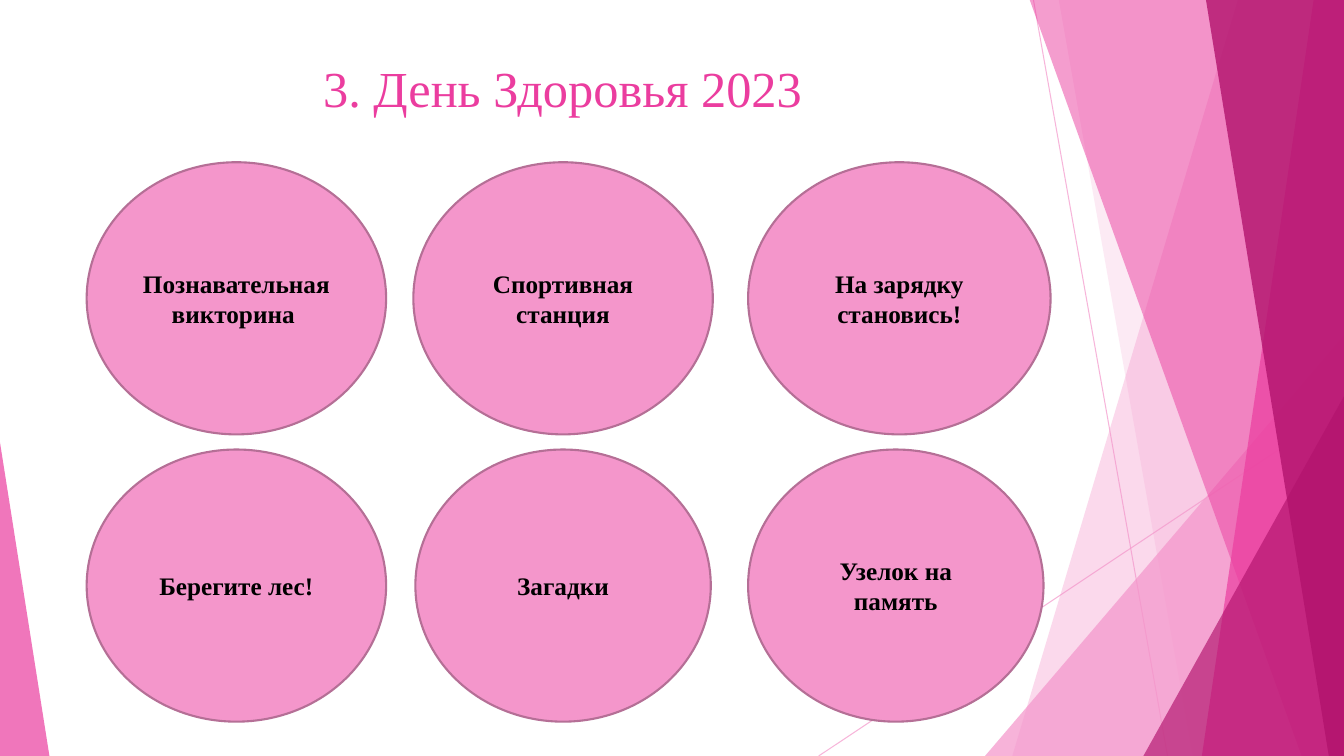
from dataclasses import dataclass

from pptx import Presentation
from pptx.dml.color import RGBColor
from pptx.enum.shapes import MSO_CONNECTOR as CONN, MSO_SHAPE as SHAPE
from pptx.enum.text import MSO_ANCHOR as ANCHOR, PP_ALIGN as ALIGN
from pptx.oxml.ns import qn
from pptx.util import Inches, Pt
from lxml.etree import SubElement

COLORS = {
    "light": "F496CB",
    "pink": "EB3D9F",
    "dark": "B2136D",
    "outline": "B56F96",
    "text": "000000",
}
FONT = "Times New Roman"
WIDTH, HEIGHT = 13.33, 7.5
BAND_TOP = -0.01


@dataclass
class Ray:
    start: tuple[float, float]
    end: tuple[float, float]


@dataclass
class Band:
    """Strip that reaches the right edge; its left side is slanted."""
    top_x: float
    bottom_x: float
    color: str
    opacity: int


@dataclass
class Corner:
    """Right triangle standing on the bottom edge; apex 0 is left, 1 is right."""
    left: float
    width: float
    height: float
    apex: int
    color: str
    opacity: int


@dataclass
class Station:
    text: str
    left: float
    row: int
    width: float


RAYS = [Ray((10.25, 0), (11.58, HEIGHT)), Ray((WIDTH, 4.03), (8.12, HEIGHT))]
FACETS = [
    Band(12.28, 10.04, "light", 36),
    Band(10.5, 11.83, "light", 20),
    Corner(9.77, 3.56, 4.17, 1, "light", 72),
    Band(10.21, 12.91, "pink", 50),
    Band(13.03, 11.92, "pink", 70),
    Band(11.96, 13.18, "dark", 80),
    Corner(11.34, 1.99, 3.57, 1, "dark", 66),
    Corner(0, 0.49, 3.11, 0, "pink", 70),
]
ROW_TOP, ROW_STEP, STATION_HEIGHT = 1.61, 2.85, 2.7
STATIONS = [
    Station("Познавательная викторина ", 0.86, 0, 2.97),
    Station("Загадки", 4.12, 1, 2.93),
    Station("Узелок на память", 7.42, 1, 2.93),
    Station("Спортивная станция", 4.1, 0, 2.97),
    Station("На зарядку становись!", 7.42, 0, 3),
    Station("Берегите лес!", 0.86, 1, 2.97),
]


def rgb(name: str) -> RGBColor:
    return RGBColor.from_string(COLORS[name])


def set_opacity(fill_parent, percent: int) -> None:
    color = fill_parent.find(qn("a:solidFill"))[0]
    SubElement(color, qn("a:alpha"), val=str(percent * 1000))


def write(sp, text: str, *, size: int, color: str, bold: bool = False,
          anchor=ANCHOR.MIDDLE) -> None:
    tf = sp.text_frame
    tf.word_wrap = True
    tf.vertical_anchor = anchor
    p = tf.paragraphs[0]
    p.alignment = ALIGN.CENTER
    r = p.add_run()
    r.text = text
    r.font.name, r.font.size, r.font.bold = FONT, Pt(size), bold
    r.font.color.rgb = rgb(color)


def draw_ray(slide, ray: Ray) -> None:
    ends = [Inches(v) for v in (*ray.start, *ray.end)]
    line = slide.shapes.add_connector(CONN.STRAIGHT, *ends)
    line.line.color.rgb = rgb("light")
    line.line.width = Pt(0.75)
    sp_pr = line._element.spPr
    set_opacity(sp_pr.find(qn("a:ln")), 70)
    SubElement(sp_pr, qn("a:effectLst"))


def draw_facet(slide, facet: Band | Corner) -> None:
    if isinstance(facet, Band):
        corners = [(facet.top_x, BAND_TOP), (WIDTH, BAND_TOP),
                   (WIDTH, HEIGHT), (facet.bottom_x, HEIGHT)]
        points = [(Inches(x), Inches(y)) for x, y in corners]
        outline = slide.shapes.build_freeform(*points[0])
        outline.add_line_segments(points[1:], close=True)
        sp = outline.convert_to_shape()
    else:
        sp = slide.shapes.add_shape(
            SHAPE.ISOSCELES_TRIANGLE, Inches(facet.left),
            Inches(HEIGHT - facet.height), Inches(facet.width), Inches(facet.height))
        sp.adjustments[0] = facet.apex
    sp.shadow.inherit = False
    sp.fill.solid()
    sp.fill.fore_color.rgb = rgb(facet.color)
    set_opacity(sp._element.spPr, facet.opacity)
    sp.line.fill.background()


def draw_station(slide, station: Station) -> None:
    sp = slide.shapes.add_shape(
        SHAPE.OVAL, Inches(station.left), Inches(ROW_TOP + station.row * ROW_STEP),
        Inches(station.width), Inches(STATION_HEIGHT))
    sp.shadow.inherit = False
    sp.fill.solid()
    sp.fill.fore_color.rgb = rgb("light")
    sp.line.color.rgb = rgb("outline")
    sp.line.width = Pt(1.5)
    write(sp, station.text, size=18, color="text", bold=True)


def main() -> None:
    prs = Presentation()
    prs.slide_width, prs.slide_height = Inches(WIDTH), Inches(HEIGHT)
    slide = prs.slides.add_slide(prs.slide_layouts[5])

    # Faceted background
    for ray in RAYS:
        draw_ray(slide, ray)
    for facet in FACETS:
        draw_facet(slide, facet)

    # Title, brought in front of the background
    title = slide.shapes.title
    title.left, title.top = Inches(0.88), Inches(0.52)
    title.width, title.height = Inches(9.4), Inches(1.44)
    write(title, "3. День Здоровья 2023", size=36, color="pink", anchor=ANCHOR.TOP)
    slide.shapes._spTree.append(title._element)

    # Stations of the day
    for station in STATIONS:
        draw_station(slide, station)

    prs.save("out.pptx")


if __name__ == "__main__":
    main()
